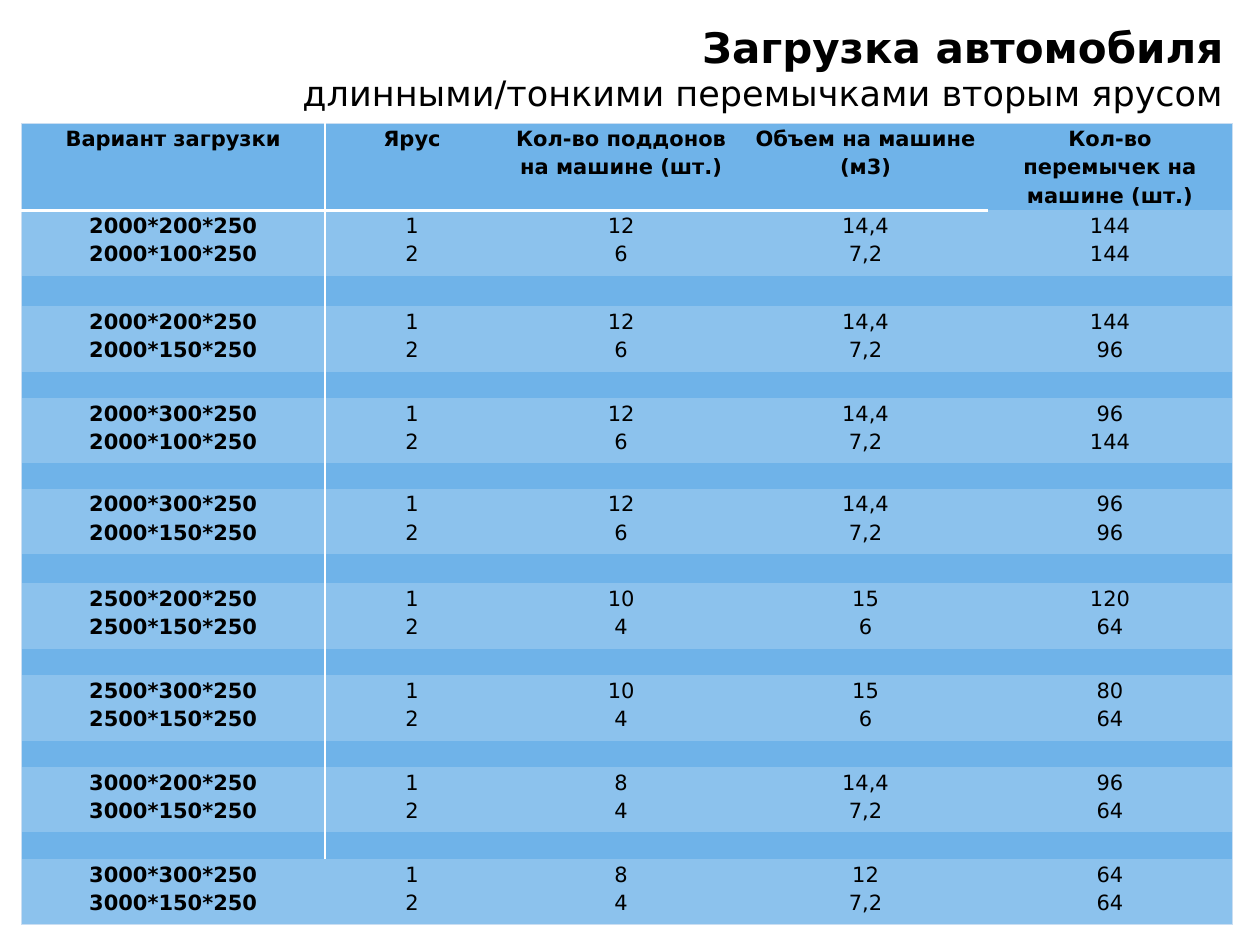
from dataclasses import dataclass

from lxml import etree
from pptx import Presentation
from pptx.dml.color import RGBColor
from pptx.enum import text
from pptx.oxml import ns
from pptx.util import Inches, Pt

FONT = "DejaVu Sans"
COLORS = {
    "text": "000000",
    "base": "6FB3E9",
    "light": "8CC2ED",
    "frame": "CADEF2",
    "rule": "FFFFFF",
}
HEADERS = [
    "Вариант загрузки",
    "Ярус",
    "Кол-во поддонов на машине (шт.)",
    "Объем на машине (м3)",
    "Кол-во перемычек на машине (шт.)",
]
COLUMN_WIDTHS = [2.41, 1.38, 1.94, 1.94, 1.94]
HEADER_HEIGHT = 0.69
LOAD_HEIGHT = 0.52
GAP_HEIGHTS = [0.24, 0.21, 0.2, 0.23, 0.21, 0.21, 0.21]


@dataclass
class Load:
    """One loading variant; each pair holds tier 1 and tier 2."""
    sizes: tuple[str, str]
    pallets: tuple[str, str]
    volumes: tuple[str, str]
    lintels: tuple[str, str]

    def columns(self) -> list[tuple[str, ...]]:
        return [self.sizes, ("1", "2"), self.pallets, self.volumes, self.lintels]


LOADS = [
    Load(("2000*200*250", "2000*100*250"), ("12", "6"), ("14,4", "7,2"), ("144", "144")),
    Load(("2000*200*250", "2000*150*250"), ("12", "6"), ("14,4", "7,2"), ("144", "96")),
    Load(("2000*300*250", "2000*100*250"), ("12", "6"), ("14,4", "7,2"), ("96", "144")),
    Load(("2000*300*250", "2000*150*250"), ("12", "6"), ("14,4", "7,2"), ("96", "96")),
    Load(("2500*200*250", "2500*150*250"), ("10", "4"), ("15", "6"), ("120", "64")),
    Load(("2500*300*250", "2500*150*250"), ("10", "4"), ("15", "6"), ("80", "64")),
    Load(("3000*200*250", "3000*150*250"), ("8", "4"), ("14,4", "7,2"), ("96", "64")),
    Load(("3000*300*250", "3000*150*250"), ("8", "4"), ("12", "7,2"), ("64", "64")),
]


def style_paragraph(paragraph, size: float, bold: bool, alignment) -> None:
    paragraph.alignment = alignment
    font = paragraph.font
    font.name, font.size, font.bold = FONT, Pt(size), bold
    font.color.rgb = RGBColor.from_string(COLORS["text"])


def add_title(slide) -> None:
    title = slide.shapes.title
    title.left, title.top = Inches(1.71), Inches(0.17)
    title.width, title.height = Inches(8), Inches(0.74)
    frame = title.text_frame
    frame.margin_left = frame.margin_right = frame.margin_top = frame.margin_bottom = 0
    frame.word_wrap = True
    frame.auto_size = text.MSO_AUTO_SIZE.NONE
    frame.vertical_anchor = text.MSO_ANCHOR.TOP
    frame.text = "Загрузка автомобиля\nдлинными/тонкими перемычками вторым ярусом"
    for paragraph, size, bold in zip(frame.paragraphs, (24, 20), (True, False)):
        style_paragraph(paragraph, size, bold, text.PP_ALIGN.RIGHT)
        paragraph.line_spacing = 1.0
        paragraph.space_before = Pt(0)


def set_borders(cell, borders: dict[str, tuple[str, float]]) -> None:
    """Draw the given sides (L, R, T, B) as (colour name, points)."""
    properties = cell._tc.get_or_add_tcPr()
    for side in "LRTB":
        if side in borders:
            color, width = borders[side]
            line = etree.SubElement(properties, ns.qn(f"a:ln{side}"), w=str(int(Pt(width))))
            fill = etree.SubElement(line, ns.qn("a:solidFill"))
            etree.SubElement(fill, ns.qn("a:srgbClr"), val=COLORS[color])


def cell_borders(row: int, column: int, last_row: int) -> dict[str, tuple[str, float]]:
    """Pale outer frame, a rule under the header and one after the first column."""
    last_column = len(HEADERS) - 1
    frame = ("frame", 0.5)
    borders = {}
    if column == 0:
        borders["L"] = frame
        if row < last_row:
            borders["R"] = ("rule", 1)
    if column == last_column:
        borders["R"] = frame
    if row == 0:
        borders["T"] = frame
        if column < last_column:
            borders["B"] = ("rule", 1.5)
    if row == last_row:
        borders["B"] = frame
    return borders


def fill_cell(cell, lines: tuple[str, ...], color: str, bold: bool) -> None:
    cell.fill.solid()
    cell.fill.fore_color.rgb = RGBColor.from_string(COLORS[color])
    cell.margin_left = cell.margin_right = Inches(0.07)
    cell.margin_top = cell.margin_bottom = 0
    frame = cell.text_frame
    if not lines:
        # A small end mark lets the gap row stay narrow.
        etree.SubElement(frame.paragraphs[0]._p, ns.qn("a:endParaRPr"), sz="800")
        return
    frame.text = "\n".join(lines)
    for paragraph in frame.paragraphs:
        style_paragraph(paragraph, 12, bold, text.PP_ALIGN.CENTER)
        paragraph.line_spacing = 1.15


def add_load_table(slide) -> None:
    rows = [[(header,) for header in HEADERS]]
    heights = [HEADER_HEIGHT]
    for index, load in enumerate(LOADS):
        if index:
            rows.append([()] * len(HEADERS))
            heights.append(GAP_HEIGHTS[index - 1])
        rows.append(load.columns())
        heights.append(LOAD_HEIGHT)

    table = slide.shapes.add_table(
        len(rows), len(HEADERS), Inches(0.17), Inches(0.98),
        Inches(sum(COLUMN_WIDTHS)), Inches(sum(heights))).table
    table.first_row = table.horz_banding = False
    style = table._tbl.tblPr.find(ns.qn("a:tableStyleId"))
    style.text = "{2D5ABB26-0587-4C30-8999-92F81FD0307C}"  # no style, no grid
    for column, width in zip(table.columns, COLUMN_WIDTHS):
        column.width = Inches(width)
    for row, (values, height) in enumerate(zip(rows, heights)):
        table.rows[row].height = Inches(height)
        for column, lines in enumerate(values):
            cell = table.cell(row, column)
            set_borders(cell, cell_borders(row, column, len(rows) - 1))
            fill_cell(cell, lines, "light" if row % 2 else "base", row == 0 or column == 0)


def main() -> None:
    presentation = Presentation()
    presentation.slide_width, presentation.slide_height = Inches(10), Inches(7.5)
    slide = presentation.slides.add_slide(presentation.slide_layouts[5])
    add_title(slide)
    add_load_table(slide)
    presentation.save("out.pptx")


if __name__ == "__main__":
    main()
